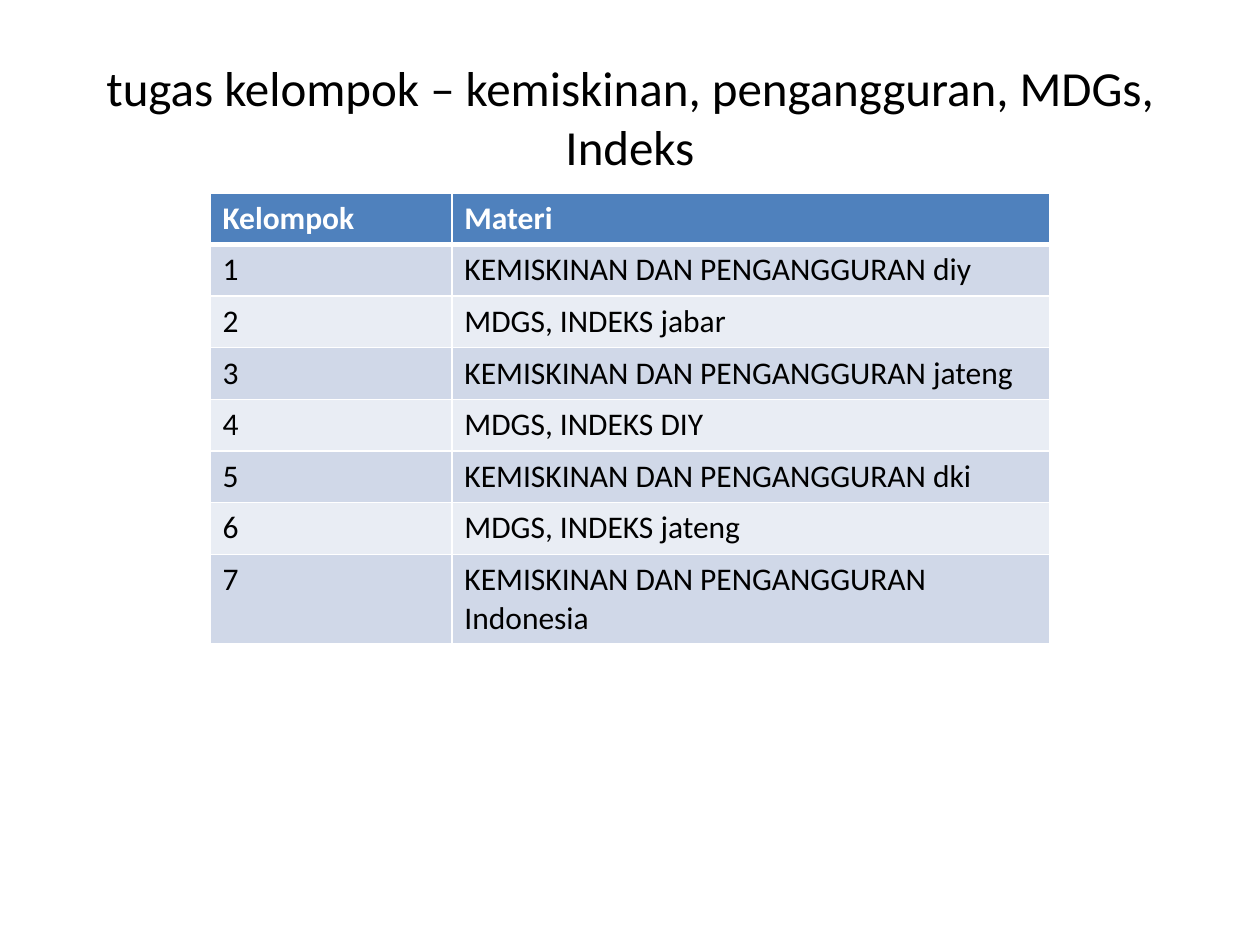
from dataclasses import dataclass

from lxml.etree import SubElement
from pptx import Presentation
from pptx.dml.color import RGBColor
from pptx.enum.text import MSO_ANCHOR, PP_ALIGN
from pptx.oxml.ns import qn
from pptx.util import Inches, Pt

# Content
TITLE = "tugas kelompok – kemiskinan, pengangguran, MDGs, Indeks"
HEADS = ("Kelompok", "Materi")
TOPICS = (
    "KEMISKINAN DAN PENGANGGURAN diy",
    "MDGS, INDEKS jabar",
    "KEMISKINAN DAN PENGANGGURAN jateng",
    "MDGS, INDEKS DIY",
    "KEMISKINAN DAN PENGANGGURAN dki",
    "MDGS, INDEKS jateng",
    "KEMISKINAN DAN PENGANGGURAN Indonesia",
)


@dataclass(frozen=True)
class Theme:
    font: str = "Calibri"
    title: int = 28
    body: int = 18
    ink: str = "000000"
    white: str = "FFFFFF"
    head: str = "4F81BD"
    bands: tuple = ("D0D8E8", "E9EDF4")
    thin: int = 1
    thick: int = 3


THEME = Theme()

# Layout in inches
WIDE, HIGH = 10, 7.5
MARGIN = WIDE / 20
TITLE_BOX = (MARGIN, HIGH * 0.04, WIDE - 2 * MARGIN, HIGH / 6)
TABLE_WIDE = WIDE * 2 / 3
TABLE_TOP = 1.53
FIRST_COL = 1.92
COLS = (FIRST_COL, TABLE_WIDE - FIRST_COL)
ROW = 0.41


def style(font, **values):
    color = values.pop("color")
    for name, value in {"name": THEME.font, **values}.items():
        setattr(font, name, value)
    font.color.rgb = RGBColor.from_string(color)


def edge(cell, side, points):
    line = SubElement(cell._tc.get_or_add_tcPr(), qn(f"a:ln{side}"),
                      w=str(Pt(points)))
    fill = SubElement(line, qn("a:solidFill"))
    SubElement(fill, qn("a:srgbClr"), val=THEME.white)


def paint(cell, text, row):
    head = row == 0
    cell.text = text
    style(cell.text_frame.paragraphs[0].runs[0].font, size=Pt(THEME.body),
          bold=head, color=THEME.white if head else THEME.ink)
    # The rule under the heading is shared by rows 0 and 1
    heavy = {0: "B", 1: "T"}.get(row)
    for side in "LRTB":
        edge(cell, side, THEME.thick if side == heavy else THEME.thin)
    shade = THEME.head if head else THEME.bands[(row - 1) % 2]
    cell.fill.solid()
    cell.fill.fore_color.rgb = RGBColor.from_string(shade)


def add_title(slide):
    title = slide.shapes.title
    for name, value in zip(("left", "top", "width", "height"), TITLE_BOX):
        setattr(title, name, Inches(value))
    frame = title.text_frame
    frame.text = TITLE
    frame.word_wrap = True
    frame.vertical_anchor = MSO_ANCHOR.MIDDLE
    line = frame.paragraphs[0]
    line.alignment = PP_ALIGN.CENTER
    style(line.runs[0].font, size=Pt(THEME.title), color=THEME.ink)


def add_groups(slide):
    rows = [HEADS, *((str(n), topic) for n, topic in enumerate(TOPICS, 1))]
    box = ((WIDE - TABLE_WIDE) / 2, TABLE_TOP, TABLE_WIDE, ROW * len(rows))
    table = slide.shapes.add_table(len(rows), len(COLS),
                                   *map(Inches, box)).table
    for col, width in zip(table.columns, COLS):
        col.width = Inches(width)
    for r, texts in enumerate(rows):
        table.rows[r].height = Inches(ROW)
        for c, text in enumerate(texts):
            paint(table.cell(r, c), text, r)


def main():
    deck = Presentation()
    deck.slide_width, deck.slide_height = Inches(WIDE), Inches(HIGH)
    slide = deck.slides.add_slide(deck.slide_layouts[5])
    add_title(slide)
    add_groups(slide)
    deck.save("out.pptx")


if __name__ == "__main__":
    main()
